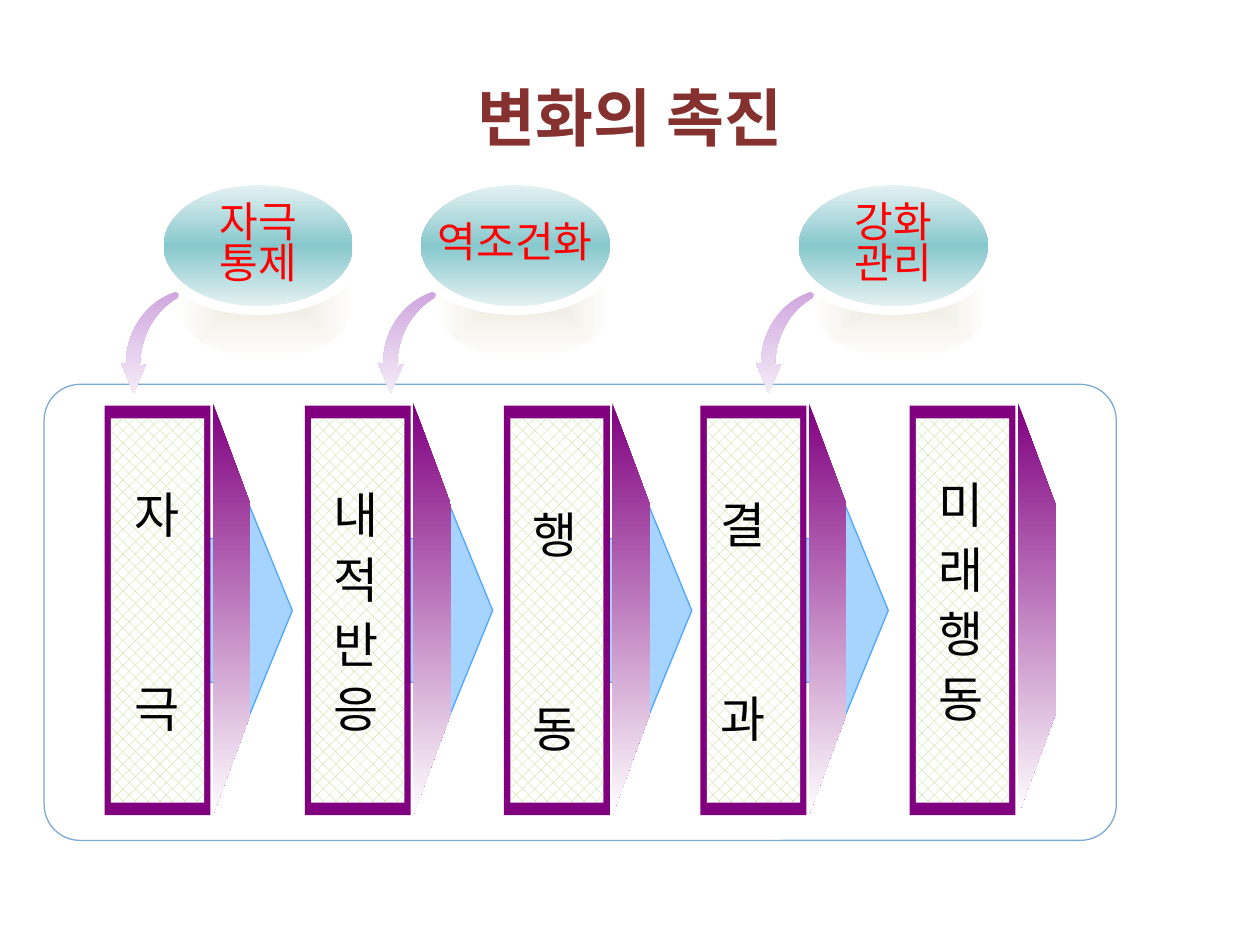
import math

from lxml import etree
from pptx import Presentation
from pptx.dml.color import RGBColor
from pptx.enum import dml, shapes, text
from pptx.oxml import ns
from pptx.util import Inches, Pt

FONT = "Noto Sans CJK KR"
BROWN = RGBColor(0x85, 0x31, 0x2F)
BLACK = RGBColor(0x00, 0x00, 0x00)
WHITE = RGBColor(0xFF, 0xFF, 0xFF)
RED = RGBColor(0xFF, 0x00, 0x00)
PURPLE = RGBColor(0x80, 0x00, 0x80)
FRAME_BLUE = RGBColor(0x7D, 0xA9, 0xD5)
ARROW_BLUE = RGBColor(0xA7, 0xD3, 0xFF)
ARROW_EDGE = RGBColor(0x4F, 0xA7, 0xFF)
GREEN = RGBColor(0xB2, 0xDA, 0x78)
LILAC = RGBColor(0xCF, 0xA4, 0xDE)
PALE_LILAC = RGBColor(0xF3, 0xEB, 0xF7)
TEAL = RGBColor(0x87, 0xC8, 0xCD)
PALE_TEAL = RGBColor(0xE5, 0xF1, 0xF2)
CREAM = RGBColor(0xEE, 0xEC, 0xE1)

# Pillar left edge, text left, text top, lines, space before the later lines (pt)
STAGES = [
    (0.83, 0.90, 3.75, "자극", 74),
    (2.42, 2.48, 3.75, "내적반응", 0),
    (4.00, 4.06, 3.91, "행동", 74),
    (5.56, 5.55, 3.83, "결과", 74),
    (7.22, 7.28, 3.67, "미래행동", 0),
]
# Oval left edge, lines
CALLOUTS = [
    (6.34, ["강화", "관리"]),
    (3.34, ["역조건화"]),
    (1.30, ["자극", "통제"]),
]


def fill_gradient(shape, stops, radial=False):
    """Fill from top to bottom, or from the centre outwards."""
    shape.fill.gradient()
    gradient = shape.fill._fill._gradFill
    for child in list(gradient):
        gradient.remove(child)
    stop_list = etree.SubElement(gradient, ns.qn("a:gsLst"))
    for position, color in stops:
        stop = etree.SubElement(stop_list, ns.qn("a:gs"), pos=str(position * 1000))
        etree.SubElement(stop, ns.qn("a:srgbClr"), val=str(color))
    if radial:
        direction = etree.SubElement(gradient, ns.qn("a:path"))
        direction.set("path", "shape")
        etree.SubElement(direction, ns.qn("a:fillToRect"),
                         l="50000", t="50000", r="50000", b="50000")
    else:
        etree.SubElement(gradient, ns.qn("a:lin"), ang="5400000", scaled="0")


def add_preset(parent, kind, left, top, width, height, fill=None, line=None):
    shape = parent.add_shape(kind, Inches(left), Inches(top),
                             Inches(width), Inches(height))
    shape.shadow.inherit = False
    if fill is None:
        shape.fill.background()
    else:
        shape.fill.solid()
        shape.fill.fore_color.rgb = fill
    if line is None:
        shape.line.fill.background()
    else:
        shape.line.color.rgb = line
        shape.line.width = Pt(0.75)
    return shape


def add_outline(parent, points, stops):
    corners = [(Inches(x), Inches(y)) for x, y in points]
    builder = parent.build_freeform(*corners[0])
    builder.add_line_segments(corners[1:], close=True)
    shape = builder.convert_to_shape()
    shape.shadow.inherit = False
    shape.line.fill.background()
    fill_gradient(shape, stops)


def write_lines(frame, lines, size, color, pitch=None, gap=0, bold=False):
    frame.text = "\n".join(lines)
    for index, paragraph in enumerate(frame.paragraphs):
        paragraph.alignment = text.PP_ALIGN.CENTER
        if pitch:
            paragraph.line_spacing = Pt(pitch)
        if index and gap:
            paragraph.space_before = Pt(gap)
        for run in paragraph.runs:
            run.font.size = Pt(size)
            run.font.bold = bold
            run.font.name = FONT
            run.font.color.rgb = color
            etree.SubElement(run.font._element, ns.qn("a:ea"), typeface=FONT)


def add_title(slide, words):
    title = slide.shapes.title
    title.left, title.top = Inches(0.5), Inches(0.3)
    title.width, title.height = Inches(9), Inches(1.25)
    title.text_frame.vertical_anchor = text.MSO_ANCHOR.MIDDLE
    write_lines(title.text_frame, [words], 36, BROWN, bold=True)


def add_pillar(parent, left, has_arrow):
    if has_arrow:
        arrow = add_preset(parent, shapes.MSO_SHAPE.RIGHT_ARROW, left + 0.27, 3.87,
                           1.22, 1.95, ARROW_BLUE, ARROW_EDGE)
        arrow.adjustments[0], arrow.adjustments[1] = 0.585, 0.327
    add_preset(parent, shapes.MSO_SHAPE.RECTANGLE, left, 3.22, 0.84, 3.25, PURPLE)
    # Tapered side face
    near, far = left + 0.86, left + 1.16
    add_outline(parent, [(near, 6.47), (far, 5.66), (far, 4.01), (near, 3.2)],
                [(0, PURPLE), (100, WHITE)])
    panel = add_preset(parent, shapes.MSO_SHAPE.RECTANGLE, left + 0.05, 3.32, 0.74, 3.05)
    panel.fill.patterned()
    panel.fill.pattern = dml.MSO_PATTERN.PERCENT_30
    panel.fill.fore_color.rgb = GREEN
    panel.fill.back_color.rgb = WHITE


def add_stage_text(slide, left, top, letters, gap):
    box = slide.shapes.add_textbox(Inches(left), Inches(top), Inches(0.69), Inches(2.16))
    box.text_frame.word_wrap = True
    write_lines(box.text_frame, letters, 28, BLACK, pitch=37, gap=gap)


def quarter_arc(center_x, center_y, radius_x, radius_y, steps=16):
    """Points from the left end of an ellipse up to its top."""
    angles = [math.pi / 2 * step / steps for step in range(steps + 1)]
    return [(center_x - radius_x * math.cos(angle), center_y - radius_y * math.sin(angle))
            for angle in angles]


def add_callout(slide, left, lines):
    group = slide.shapes.add_group_shape().shapes
    oval = shapes.MSO_SHAPE.OVAL
    # Curved arrow: inner arc, outer arc back, arrowhead
    inner = quarter_arc(left + 0.35, 2.91, 0.54, 0.61)
    outer = quarter_arc(left + 0.26, 2.89, 0.56, 0.6)
    head = [(left - 0.34, 2.88), (left - 0.24, 3.12), (left - 0.14, 2.89)]
    add_outline(group, inner + outer[::-1] + head, [(0, LILAC), (100, PALE_LILAC)])
    # Soft glow, white rim and labelled oval
    glow = add_preset(group, oval, left + 0.11, 1.97, 1.4, 0.88)
    fill_gradient(glow, [(0, CREAM), (100, WHITE)], radial=True)
    add_preset(group, oval, left - 0.08, 1.54, 1.65, 0.96, WHITE)
    label = add_preset(group, oval, left, 1.47, 1.5, 0.96)
    fill_gradient(label, [(0, PALE_TEAL), (50, TEAL), (100, PALE_TEAL)])
    label.text_frame.word_wrap = False
    label.text_frame.vertical_anchor = text.MSO_ANCHOR.MIDDLE
    write_lines(label.text_frame, lines, 24, RED, pitch=23.5)


def main():
    presentation = Presentation()
    presentation.slide_width, presentation.slide_height = Inches(10), Inches(7.5)
    slide = presentation.slides.add_slide(presentation.slide_layouts[5])
    add_title(slide, "변화의 촉진")

    # Rounded frame around the stages
    frame = add_preset(slide.shapes, shapes.MSO_SHAPE.ROUNDED_RECTANGLE,
                       0.35, 3.05, 8.51, 3.62, line=FRAME_BLUE)
    frame.adjustments[0] = 0.079

    # Pillars, then their vertical words
    pillars = slide.shapes.add_group_shape().shapes
    for stage in STAGES:
        add_pillar(pillars, stage[0], has_arrow=stage is not STAGES[-1])
    for stage in STAGES:
        add_stage_text(slide, *stage[1:])

    for left, lines in CALLOUTS:
        add_callout(slide, left, lines)
    presentation.save("out.pptx")


if __name__ == "__main__":
    main()
